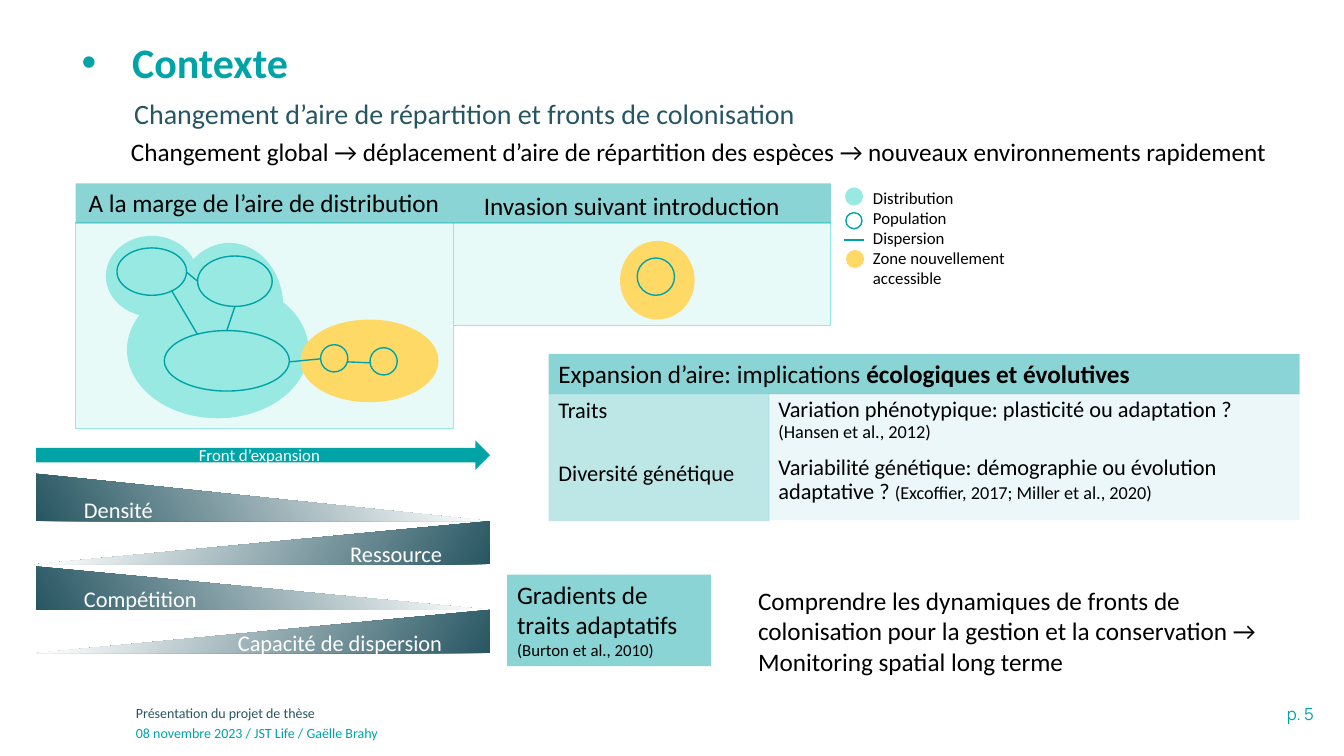
from dataclasses import dataclass
from typing import Any, NamedTuple, Optional

import pptx
import pptx.dml.color
import pptx.enum.shapes
import pptx.enum.text
import pptx.oxml.ns
import pptx.util
from lxml import etree

Inches = pptx.util.Inches
Kind = pptx.enum.shapes.MSO_SHAPE
Align = pptx.enum.text.PP_ALIGN
Anchor = pptx.enum.text.MSO_ANCHOR
qn = pptx.oxml.ns.qn

HUES = {
    "teal": "00A3A6", "deep": "275662", "mint": "97E9E1", "gold": "FFD966",
    "black": "000000", "white": "FFFFFF", "pale": "FDFEFE",
}
Box = tuple[float, float, float, float]


class Run(NamedTuple):
    text: str
    size: Optional[float] = None
    bold: Optional[bool] = None


@dataclass
class Form:
    box: Box
    fill: Optional[str] = None
    line: Optional[str] = None
    alpha: int = 100
    kind: Any = Kind.OVAL


@dataclass
class Link:
    start: tuple[float, float]
    end: tuple[float, float]


@dataclass
class Label:
    box: Box
    text: Any
    size: float = 18
    hue: str = "black"
    font: str = "Calibri"
    align: Any = Align.LEFT


@dataclass
class Wedge:
    box: Box
    text: str
    flip: bool


def shade(name: str) -> Any:
    return pptx.dml.color.RGBColor.from_string(HUES[name])


def write(shape: Any, text: Any, size: float = 18, hue: str = "black", font: str = "Calibri",
          bold: bool = False, align: Any = Align.LEFT, anchor: Any = Anchor.TOP,
          gap: float = 0, lead: Optional[float] = None, mark: Optional[str] = None,
          hang: float = 0, left: float = 0.1) -> None:
    frame = shape.text_frame
    frame.word_wrap = True
    frame.auto_size = pptx.enum.text.MSO_AUTO_SIZE.NONE
    frame.vertical_anchor = anchor
    frame.margin_left, frame.margin_right = Inches(left), Inches(0.1)
    frame.margin_top = frame.margin_bottom = Inches(0.05)
    paras = [[Run(text)]] if isinstance(text, str) else text
    for rank, runs in enumerate(paras):
        para = frame.add_paragraph() if rank else frame.paragraphs[0]
        props = para._p.get_or_add_pPr()
        props.set("marL", str(Inches(hang)))
        props.set("indent", str(-Inches(hang)))
        if mark:
            etree.SubElement(props, qn("a:buFont")).set("typeface", "Arial")
            etree.SubElement(props, qn("a:buChar")).set("char", mark)
        else:
            etree.SubElement(props, qn("a:buNone"))
        para.alignment = align
        para.space_before = pptx.util.Pt(gap if rank else 0)
        if lead:
            para.line_spacing = lead
        for part in runs:
            run = para.add_run()
            run.text = part.text
            run.font.name = font
            run.font.size = pptx.util.Pt(part.size or size)
            run.font.bold = bold if part.bold is None else part.bold
            run.font.color.rgb = shade(hue)


def place(shape: Any, box: Box) -> None:
    shape.left, shape.top, shape.width, shape.height = map(Inches, box)


def paint(shape: Any, hue: str, alpha: int = 100) -> None:
    shape.fill.solid()
    shape.fill.fore_color.rgb = shade(hue)
    if alpha < 100:
        tone = shape._element.spPr.find(qn("a:solidFill")).find(qn("a:srgbClr"))
        etree.SubElement(tone, qn("a:alpha")).set("val", str(alpha * 1000))


def draw(shapes: Any, form: Form) -> Any:
    shape = shapes.add_shape(form.kind, *map(Inches, form.box))
    shape.shadow.inherit = False
    if form.fill:
        paint(shape, form.fill, form.alpha)
    else:
        shape.fill.background()
    if form.line:
        shape.line.color.rgb = shade(form.line)
        shape.line.width = pptx.util.Pt(1)
    else:
        shape.line.fill.background()
    return shape


def join(shapes: Any, link: Link) -> None:
    line = shapes.add_connector(pptx.enum.shapes.MSO_CONNECTOR.STRAIGHT,
                                *map(Inches, link.start + link.end))
    line.line.color.rgb = shade("teal")
    line.line.width = pptx.util.Pt(1)
    etree.SubElement(line._element.spPr, qn("a:effectLst"))


def sketch(shapes: Any, items: list) -> None:
    for item in items:
        if isinstance(item, Link):
            join(shapes, item)
        else:
            draw(shapes, item)


def slope(shapes: Any, wedge: Wedge) -> None:
    shape = draw(shapes, Form(wedge.box, kind=Kind.RIGHT_TRIANGLE))
    shape.fill.gradient()
    shape.fill.gradient_angle = 30
    for stop, hue, spot in zip(shape.fill.gradient_stops, ("deep", "pale"), (0, 0.93)):
        stop.color.rgb = shade(hue)
        stop.position = spot
    if wedge.flip:
        shape._element.spPr.xfrm.set("flipH", "1")
    write(shape, wedge.text, size=16, hue="white", anchor=Anchor.MIDDLE,
          align=Align.RIGHT if wedge.flip else Align.LEFT)


def ring(*box: float) -> Form:
    return Form(box, line="teal")


PANELS = [
    Form((4.5, 2.21, 3.74, 1.02), "mint", "mint", 21, Kind.RECTANGLE),
    Form((0.75, 2.21, 3.75, 2.04), "mint", "mint", 21, Kind.RECTANGLE),
    Form((0.75, 1.82, 7.49, 0.4), "teal", None, 46, Kind.RECTANGLE),
]
KEY = [
    ring(8.39, 2.11, 0.16, 0.16), Link((8.57, 2.38), (8.37, 2.38)),
    Form((8.39, 2.48, 0.18, 0.18), "gold"), Form((8.38, 1.86, 0.18, 0.18), "mint"),
]
ISLAND = [Form((6.15, 2.39, 0.74, 0.78), "gold"), ring(6.32, 2.56, 0.37, 0.37)]
RANGE = [
    Form((1.26, 2.79, 1.8, 1.36), "mint"), Form((1.05, 2.34, 0.91, 0.8), "mint"),
    Form((1.74, 2.41, 1.07, 1.27), "mint"),
    ring(1.16, 2.46, 0.69, 0.47), ring(1.96, 2.54, 0.74, 0.5), ring(1.63, 3.28, 1.24, 0.6),
    Link((2.25, 3.28), (2.33, 3.04)), Link((1.96, 3.32), (1.7, 2.88)),
    Link((1.96, 2.79), (1.85, 2.7)),
    Form((2.98, 3.17, 1.37, 0.82), "gold"), ring(3.18, 3.42, 0.27, 0.27),
    Link((3.44, 3.59), (3.68, 3.6)), ring(3.67, 3.45, 0.27, 0.27),
    Link((3.18, 3.56), (2.87, 3.59)),
]
LABELS = [
    Label((10.85, 6.93, 2.28, 0.3), "p. 5", 12, "teal", "Manrope", Align.RIGHT),
    Label((1.25, 6.94, 7.34, 0.28), "Présentation du projet de thèse", 10, "deep"),
    Label((1.25, 7.14, 7.34, 0.28), "08 novembre 2023 / JST Life / Gaëlle Brahy", 10, "teal"),
    Label((1.2, 1.3, 12.1, 0.4), "Changement global → déplacement d’aire de répartition "
          "des espèces → nouveaux environnements rapidement"),
    Label((4.7, 1.84, 3.72, 0.4), "Invasion suivant introduction"),
    Label((0.78, 1.81, 3.85, 0.4), "A la marge de l’aire de distribution"),
    Label((8.56, 1.81, 2.01, 1.11), [[Run(name)] for name in (
        "Distribution", "Population", "Dispersion", "Zone nouvellement accessible")], 12),
    Label((7.42, 5.76, 5.44, 1.01), "Comprendre les dynamiques de fronts de colonisation pour "
          "la gestion et la conservation → Monitoring spatial long terme"),
]
WEDGES = [
    Wedge((0.36, 4.7, 4.5, 0.47), "Densité", False),
    Wedge((0.34, 5.17, 4.52, 0.43), "Ressource", True),
    Wedge((0.36, 5.62, 4.5, 0.43), "Compétition", False),
    Wedge((0.36, 6.05, 4.5, 0.43), "Capacité de dispersion", True),
]


def main() -> None:
    deck = pptx.Presentation()
    deck.slide_width, deck.slide_height = Inches(13.33), Inches(7.5)
    slide = deck.slides.add_slide(deck.slide_layouts[3])
    shapes = slide.shapes
    title, body, lede = slide.placeholders
    place(title, (0.81, 0.16, 11.17, 0.97))
    write(title, "Contexte", size=30, hue="teal", bold=True, anchor=Anchor.MIDDLE,
          lead=0.9, mark="•", hang=0.5, left=0)
    place(lede, (1.23, 0.94, 10.59, 0.74))
    write(lede, "Changement d’aire de répartition et fronts de colonisation",
          size=20, hue="deep", lead=0.9)
    place(body, (7.62, 3.9, 5.27, 1.26))
    paint(body, "teal", 8)
    write(body, [
        [Run("Variation phénotypique: plasticité ou adaptation ? "),
         Run("(Hansen et al., 2012)", 13)],
        [Run("Variabilité génétique: démographie ou évolution adaptative ? "),
         Run("(Excoffier, 2017; Miller et al., 2020)", 13)],
    ], size=16, lead=0.9, gap=10)

    sketch(shapes, PANELS + KEY)
    for parts in (ISLAND, RANGE):
        sketch(shapes.add_group_shape().shapes, parts)
    for label in LABELS:
        write(shapes.add_textbox(*map(Inches, label.box)), label.text, size=label.size,
              hue=label.hue, font=label.font, align=label.align)

    head = draw(shapes, Form((5.44, 3.51, 7.45, 0.4), "teal", None, 46, Kind.RECTANGLE))
    write(head, [[Run("Expansion d’aire: implications "),
                  Run("écologiques et évolutives", bold=True)]])
    side = draw(shapes, Form((5.44, 3.91, 2.19, 1.26), "teal", None, 26, Kind.RECTANGLE))
    write(side, [[Run("Traits")], [Run("Diversité génétique")]], size=16, lead=0.9, gap=28)
    traits = draw(shapes, Form((5.03, 5.7, 2.02, 0.91), "teal", None, 46, Kind.RECTANGLE))
    write(traits, [[Run("Gradients de traits adaptatifs "), Run("(Burton et al., 2010)", 12)]])
    front = draw(shapes, Form((0.36, 4.37, 4.5, 0.29), "teal", kind=Kind.RIGHT_ARROW))
    write(front, "Front d’expansion", size=12, hue="white", align=Align.CENTER,
          anchor=Anchor.MIDDLE)
    for wedge in WEDGES:
        slope(shapes, wedge)
    deck.save("out.pptx")


if __name__ == "__main__":
    main()
